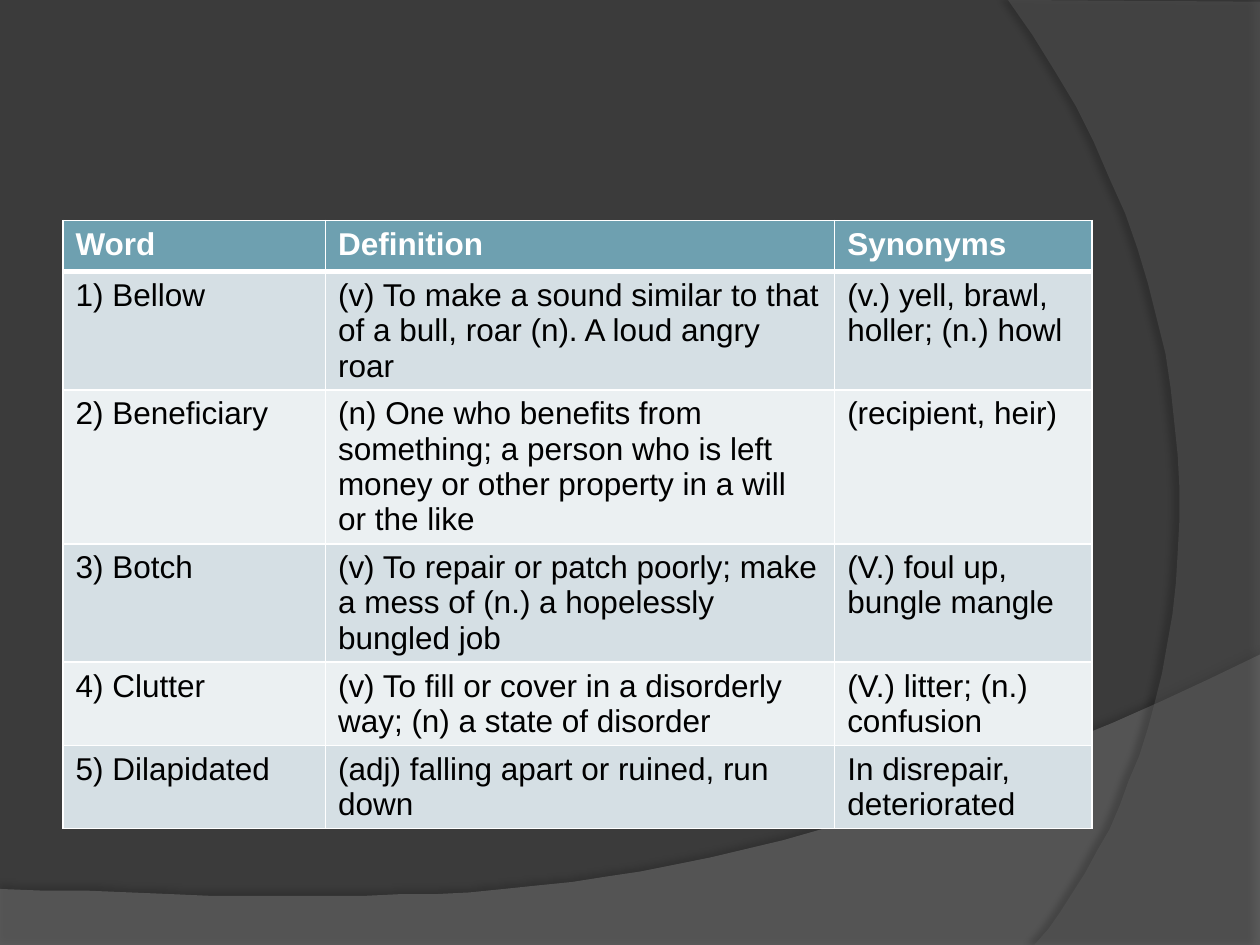
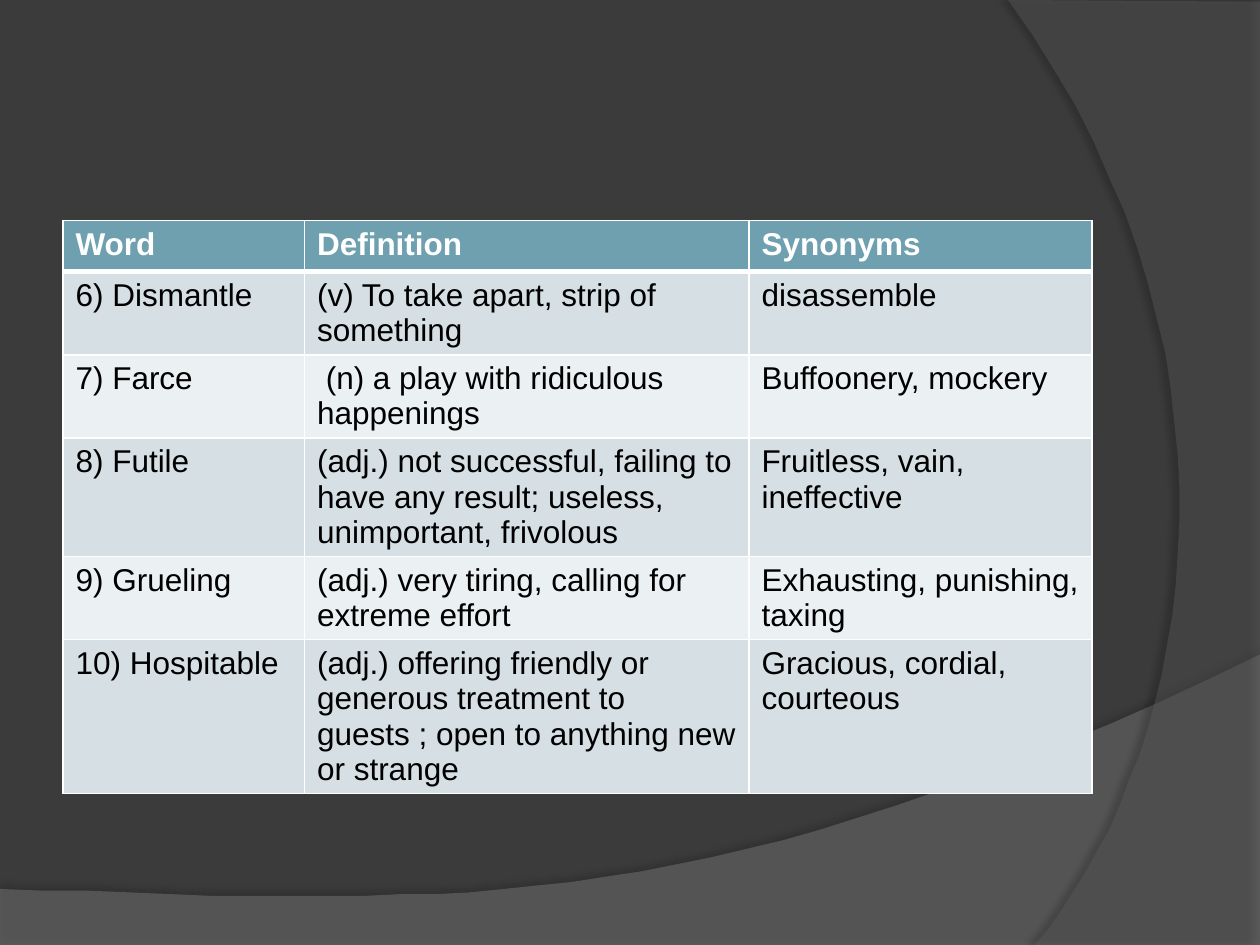
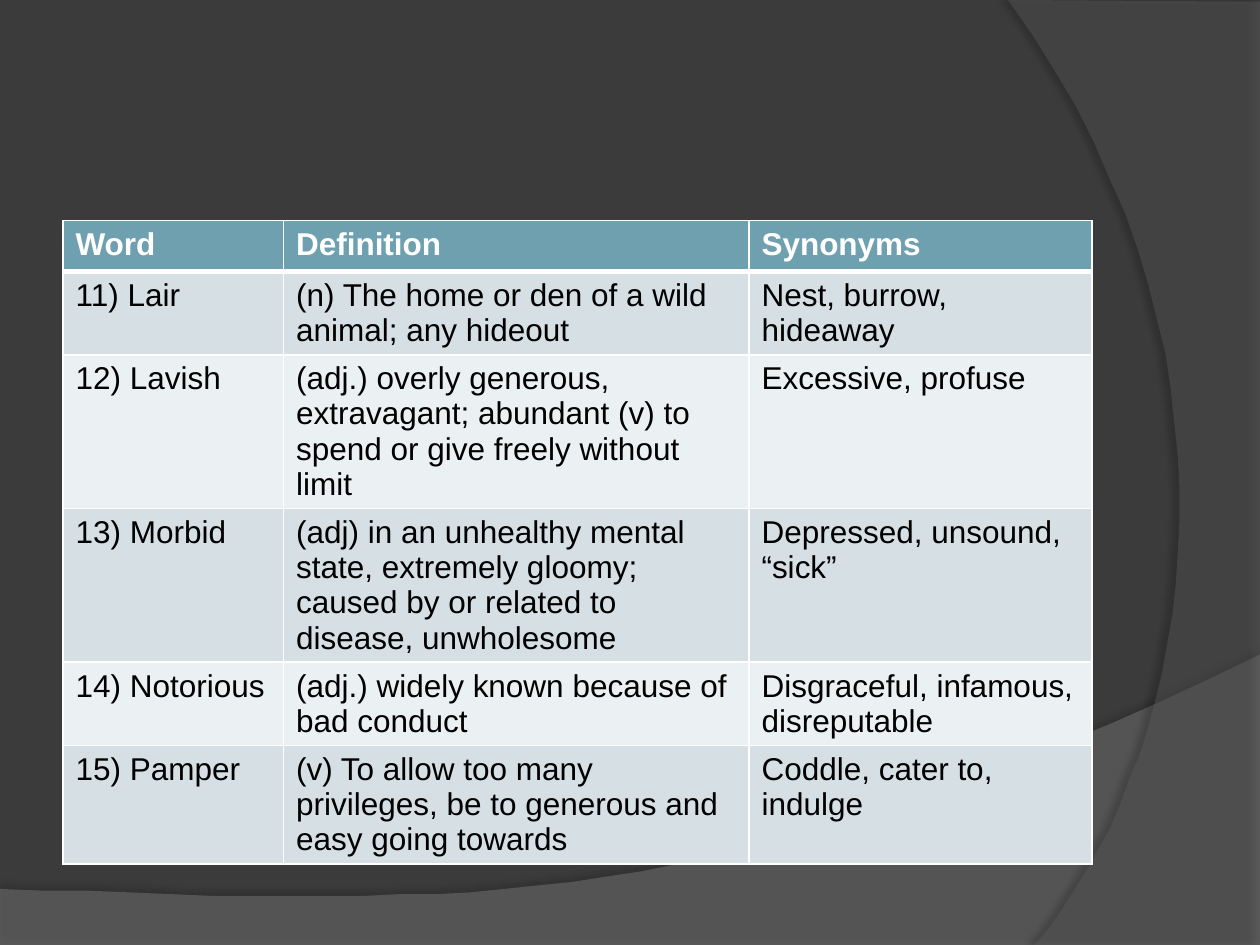
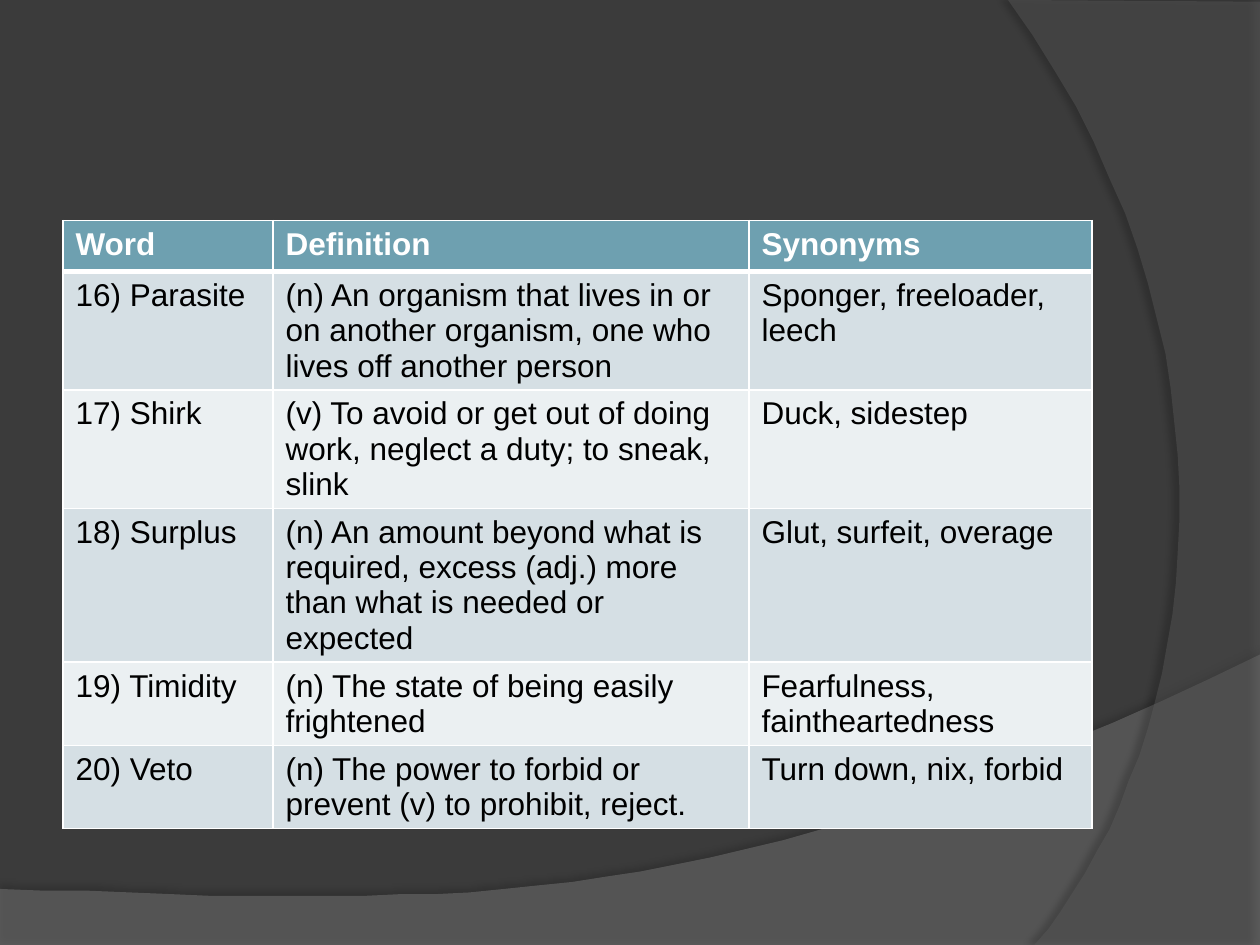
from lxml import etree
from pptx import Presentation
from pptx.dml.color import RGBColor
from pptx.oxml import parse_xml
from pptx.oxml.ns import nsdecls, qn
from pptx.util import Pt

BACK = RGBColor(0x3B, 0x3B, 0x3B)
WAVE = RGBColor(0x7F, 0x7F, 0x7F)
SIDE = RGBColor(0x5E, 0x5E, 0x5E)
TEAL = RGBColor(0x6E, 0xA0, 0xB0)
DARK = RGBColor(0xD5, 0xDF, 0xE4)
PALE = RGBColor(0xEB, 0xF0, 0xF2)
WHITE = RGBColor(0xFF, 0xFF, 0xFF)
BLACK = RGBColor(0, 0, 0)

FONT = "Arial"
LEFT, TOP, WIDTH, ROW = 36, 126, 588, 29.2
STEPS = 32
HEAD = ("Word", "Definition", "Synonyms")

# Straight corners, then the four Bezier points of the curved edge,
# then fill, opacity, shadow opacity, shadow distance and shadow angle.
BANDS = [
    ([(0, 507.6), (0, 540.7), (720, 540.7)],
     [(720, 374.4), (402.5, 524.9), (281.5, 517.7), (0, 507.6)],
     WAVE, 45, 35, 3.5, 270),
    ([(720, 1.4), (720, 540)],
     [(591.1, 540), (673.2, 445.7), (733, 216), (576, 0)],
     SIDE, 40, 45, 4, 180),
]

# Widths of the word and synonym columns, then the rows.
LISTS = [
    (150, 147, [
        ("1) Bellow",
         "(v) To make a sound similar to that of a bull, roar (n). A loud angry roar",
         "(v.) yell, brawl, holler; (n.) howl"),
        ("2) Beneficiary",
         "(n) One who benefits from something; a person who is left money "
         "or other property in a will or the like",
         "(recipient, heir)"),
        ("3) Botch",
         "(v) To repair or patch poorly; make a mess of (n.) a hopelessly bungled job",
         "(V.) foul up, bungle mangle"),
        ("4) Clutter",
         "(v) To fill or cover in a disorderly way; (n) a state of disorder",
         "(V.) litter; (n.) confusion"),
        ("5) Dilapidated",
         "(adj) falling apart or ruined, run down",
         "In disrepair, deteriorated"),
    ]),
    (138, 196, [
        ("6) Dismantle", "(v) To take apart, strip of something", "disassemble"),
        ("7) Farce", " (n) a play with ridiculous happenings", "Buffoonery, mockery"),
        ("8) Futile",
         "(adj.) not successful, failing to have any result; useless, "
         "unimportant, frivolous",
         "Fruitless, vain, ineffective"),
        ("9) Grueling",
         "(adj.) very tiring, calling for extreme effort",
         "Exhausting, punishing, taxing"),
        ("10) Hospitable",
         "(adj.) offering friendly or generous treatment to guests ; "
         "open to anything new or strange",
         "Gracious, cordial, courteous"),
    ]),
    (126, 196, [
        ("11) Lair",
         "(n) The home or den of a wild animal; any hideout",
         "Nest, burrow, hideaway"),
        ("12) Lavish",
         "(adj.) overly generous, extravagant; abundant (v) to spend "
         "or give freely without limit",
         "Excessive, profuse"),
        ("13) Morbid",
         "(adj) in an unhealthy mental state, extremely gloomy; caused by "
         "or related to disease, unwholesome",
         "Depressed, unsound, “sick”"),
        ("14) Notorious",
         "(adj.) widely known because of bad conduct",
         "Disgraceful, infamous, disreputable"),
        ("15) Pamper",
         "(v) To allow too many privileges, be to generous and easy going towards",
         "Coddle, cater to, indulge"),
    ]),
    (120, 196, [
        ("16) Parasite",
         "(n) An organism that lives in or on another organism, one who "
         "lives off another person",
         "Sponger, freeloader, leech"),
        ("17) Shirk",
         "(v) To avoid or get out of doing work, neglect a duty; to sneak, slink",
         "Duck, sidestep"),
        ("18) Surplus",
         "(n) An amount beyond what is required, excess (adj.) more than "
         "what is needed or expected",
         "Glut, surfeit, overage"),
        ("19) Timidity",
         "(n) The state of being easily frightened",
         "Fearfulness, faintheartedness"),
        ("20) Veto",
         "(n) The power to forbid or prevent (v) to prohibit, reject.",
         "Turn down, nix, forbid"),
    ]),
]


def curve(a, b, c, d):
    """Return points along a cubic Bezier curve, both ends included."""
    spots = []
    for step in range(STEPS + 1):
        t = step / STEPS
        u = 1 - t
        spots.append(tuple(
            u**3 * p + 3 * u * u * t * q + 3 * u * t * t * r + t**3 * s
            for p, q, r, s in zip(a, b, c, d)))
    return spots


def edge(cell, side, width):
    """Draw one white border of a table cell."""
    cell.get_or_add_tcPr().append(parse_xml(
        f'<a:{side} {nsdecls("a")} w="{Pt(width)}"><a:solidFill>'
        f'<a:srgbClr val="{WHITE}"/></a:solidFill></a:{side}>'))


prs = Presentation()
prs.slide_width, prs.slide_height = Pt(720), Pt(540)
fill = prs.slide_master.background.fill
fill.solid()
fill.fore_color.rgb = BACK

for first, last, rows in LISTS:
    slide = prs.slides.add_slide(prs.slide_layouts[6])

    for ends, bend, color, alpha, shade, dist, angle in BANDS:
        spots = ends + curve(*bend)
        pen = slide.shapes.build_freeform(*spots[0], scale=Pt(1))
        pen.add_line_segments(spots[1:], close=True)
        band = pen.convert_to_shape()
        band.fill.solid()
        band.fill.fore_color.rgb = color
        band.line.fill.background()
        props = band.fill._xPr
        tint = props.find(qn("a:solidFill")).find(qn("a:srgbClr"))
        etree.SubElement(tint, qn("a:alpha"), val=str(alpha * 1000))
        props.append(parse_xml(
            f'<a:effectLst {nsdecls("a")}><a:outerShdw blurRad="{Pt(4)}" '
            f'dist="{Pt(dist)}" dir="{angle * 60000}" algn="ctr" rotWithShape="0">'
            f'<a:srgbClr val="{BLACK}"><a:alpha val="{shade * 1000}"/></a:srgbClr>'
            '</a:outerShdw></a:effectLst>'))

    lines = [HEAD] + rows
    table = slide.shapes.add_table(
        len(lines), len(HEAD), Pt(LEFT), Pt(TOP), Pt(WIDTH), Pt(ROW * len(lines))).table
    for col, width in zip(table.columns, (first, WIDTH - first - last, last)):
        col.width = Pt(width)
    for i, line in enumerate(lines):
        table.rows[i].height = Pt(ROW)
        for j, text in enumerate(line):
            cell = table.cell(i, j)
            edge(cell._tc, "lnL", 1)
            edge(cell._tc, "lnR", 1)
            edge(cell._tc, "lnT", 3 if i == 1 else 1)
            edge(cell._tc, "lnB", 3 if i == 0 else 1)
            cell.fill.solid()
            cell.fill.fore_color.rgb = TEAL if i == 0 else DARK if i % 2 else PALE
            run = cell.text_frame.paragraphs[0].add_run()
            run.text = text
            run.font.name = FONT
            run.font.size = Pt(18)
            run.font.bold = i == 0
            run.font.color.rgb = BLACK if i else WHITE

prs.save("out.pptx")
